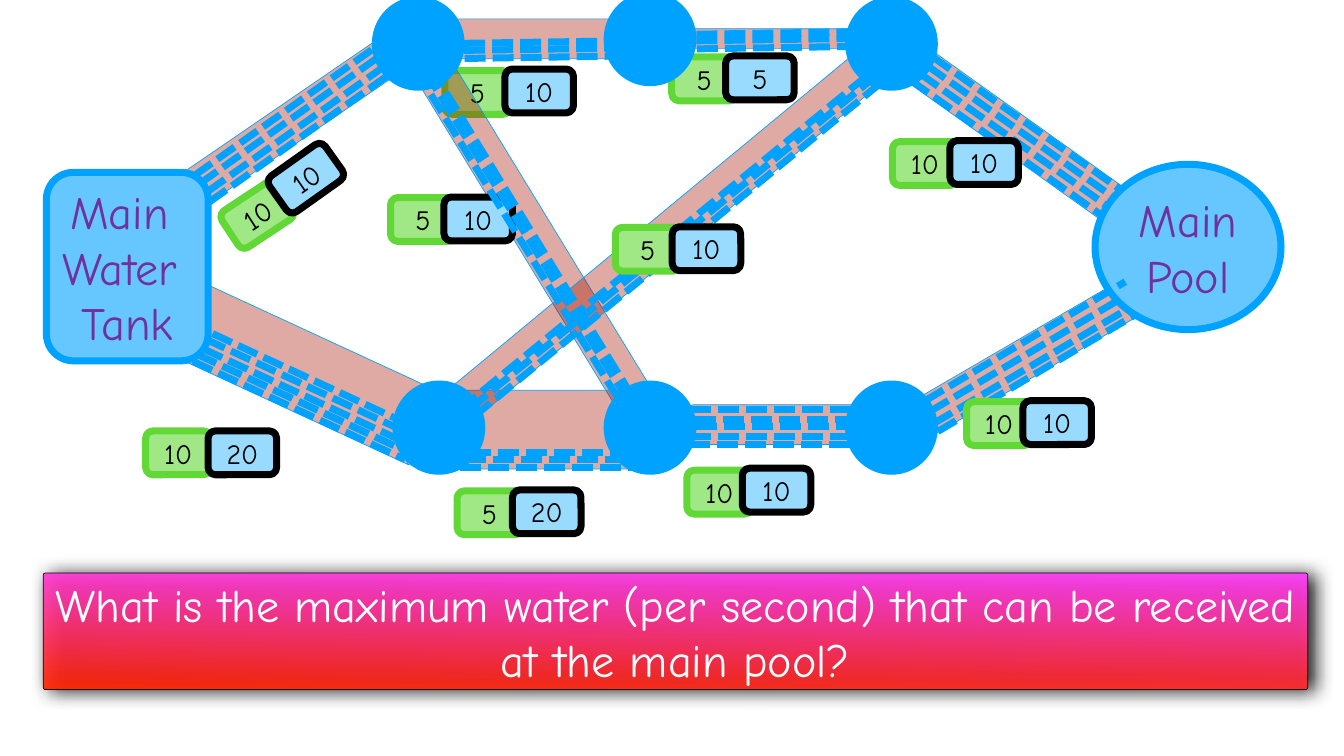
"""Build the water flow network slide."""
from lxml.etree import SubElement
from pptx import Presentation
from pptx.dml.color import RGBColor
from pptx.enum.dml import MSO_LINE
from pptx.enum.shapes import MSO_CONNECTOR, MSO_SHAPE
from pptx.enum.text import MSO_ANCHOR, PP_ALIGN
from pptx.oxml.ns import qn
from pptx.util import Inches, Pt

HUE = {
    "flow": "00A2FF", "pipe": "A61500", "lime": "A0E886", "leaf": "61D836",
    "sky": "99DAFF", "pool": "66C7FF", "ink": "000000", "plum": "7030A0",
    "pink": "FF40FF", "red": "FF2600", "white": "FFFFFF",
}

deck = Presentation()
deck.slide_width, deck.slide_height = Inches(26.67), Inches(15)
slide = deck.slides.add_slide(deck.slide_layouts[6])
shapes = slide.shapes


def tint(name):
    return RGBColor.from_string(HUE[name])


def draw(kind, place, text="", fill=None, edge=None, thick=10, turn=0,
         size=40, hue="ink"):
    shape = shapes.add_shape(kind, *[Inches(n) for n in place])
    shape.shadow.inherit = False
    shape.rotation = turn
    if fill:
        shape.fill.solid()
        shape.fill.fore_color.rgb = tint(fill)
    if edge:
        shape.line.color.rgb = tint(edge)
        shape.line.width = Pt(thick)
    else:
        shape.line.fill.background()
    if text:
        frame = shape.text_frame
        frame.word_wrap = True
        frame.vertical_anchor = MSO_ANCHOR.MIDDLE
        frame.margin_left = frame.margin_right = Inches(0.06)
        frame.margin_top = frame.margin_bottom = Inches(0.06)
        frame.text = text
        for para in frame.paragraphs:
            para.alignment = PP_ALIGN.CENTER
            para.font.name = "Comic Neue"
            para.font.size = Pt(size)
            para.font.color.rgb = tint(hue)
    return shape


def stream(x, y, run, rise):
    line = shapes.add_connector(MSO_CONNECTOR.STRAIGHT, Inches(x), Inches(y),
                                Inches(x + run), Inches(y + rise))
    line.line.color.rgb = tint("flow")
    line.line.width = Pt(10)
    line.line.dash_style = MSO_LINE.SQUARE_DOT
    SubElement(line._element.spPr, qn("a:effectLst"))


USED = {"fill": "lime", "edge": "leaf"}
CAP = {"fill": "sky", "edge": "ink"}
ROUND = MSO_SHAPE.ROUNDED_RECTANGLE

under = [
    (2.89, 8.55, "10", 0, 4.13, 8.55, "20", 0),
    (7.75, 3.92, "5", 0, 8.81, 3.91, "10", 0),
    (13.33, 1.13, "5", 0, 14.4, 1.11, "5", 0),
    (8.83, 1.4, "5", 0, 10.02, 1.37, "10", 0),
    (4.46, 3.83, "10", 326.5, 5.39, 3.1, "10", 324.6),
]
for x, y, text, turn, *_ in under:
    draw(ROUND, (x, y, 1.29, 0.87), text, turn=turn, **USED)

pipes = [
    (10.21, 0.81, 0.79, 7.71, 148.6),
    (5.37, 4.74, 1.57, 5.43, 114.8),
    (10.07, 6.64, 1.56, 3.77, 90),
    (14.95, 6.73, 0.79, 3.39, 90),
    (19.84, -0.11, 0.79, 5.68, 125.5),
    (12.68, -0.73, 0.79, 11.03, 50.4),
    (20.02, 4.02, 0.79, 6.11, 59.8),
    (14.99, -1.09, 0.39, 3.71, 90),
    (10.29, -1.28, 0.79, 4.1, 90),
    (5.36, -0.15, 0.79, 5.2, 55.6),
]
for *place, turn in pipes:
    pipe = draw(MSO_SHAPE.CAN, place, fill="pipe", edge="flow", thick=1,
                turn=turn)
    shade = pipe._element.spPr.find(qn("a:solidFill"))[0]
    SubElement(shade, qn("a:alpha"), val="36000")

draw(ROUND, (0.92, 3.42, 3.21, 3.74), "Main \nWater \nTank", fill="pool",
     edge="flow", size=66, hue="plum")

nodes = [(7.38, -0.07), (7.79, 7.55), (11.98, -0.16), (16.77, -0.07),
         (11.98, 7.55), (16.77, 7.55)]
for x, y in nodes:
    draw(MSO_SHAPE.OVAL, (x, y, 1.84, 1.87), fill="flow")

for *_, x, y, text, turn in under:
    draw(ROUND, (x, y, 1.36, 0.87), text, turn=turn, **CAP)

banner = draw(ROUND, (0.86, 11.37, 25.09, 2.31),
              "What is the maximum water (per second) that can be received "
              "at the main pool?", edge="ink", thick=1, size=66, hue="white")
banner.adjustments[0] = 0.017
banner.fill.gradient()
banner.fill.gradient_angle = 269
for stop, name in zip(banner.fill.gradient_stops, ("pink", "red")):
    stop.color.rgb = tint(name)
props = banner._element.spPr
for shade in props.iter(qn("a:srgbClr")):
    SubElement(shade, qn("a:alpha"), val="93000")
glow = SubElement(props.find(qn("a:effectLst")), qn("a:outerShdw"),
                  blurRad=str(Pt(28)), dist=str(Pt(9)), dir="0",
                  rotWithShape="0")
shade = SubElement(glow, qn("a:srgbClr"), val=HUE["ink"])
SubElement(shade, qn("a:alpha"), val="97000")

streams = [
    (3.77, -2.67, [(4.15, 4.01), (4.12, 3.8), (3.97, 3.64), (3.86, 3.48)]),
    (3.2, -0.05, [(9.22, 1.16), (9.21, 1), (9.21, 0.86),
                  (13.83, 0.97), (13.82, 0.81), (13.82, 0.68)]),
    (4.16, 6.76, [(8.26, 1.4), (8.45, 1.43)]),
    (4.54, 7.41, [(7.98, 0.41)]),
    (4.21, 1.95, [(3.83, 7.17), (3.91, 7.03), (4.03, 6.92), (4.08, 6.73),
                  (4.22, 6.62)]),
    (8.43, -6.91, [(9.41, 8.26), (9.34, 8.1), (9.13, 8.12)]),
    (3.48, 0, [(9.13, 9.28), (9.22, 9.12), (9.32, 8.98), (13.67, 8.81),
               (13.69, 8.66), (13.82, 8.47), (13.79, 8.32), (13.69, 8.12)]),
    (3.98, -2.35, [(18.61, 8.56), (18.53, 8.4), (18.46, 8.16)]),
    (3.99, 2.82, [(18.08, 1.6), (18.27, 1.47), (18.41, 1.31), (18.51, 1.13)]),
]
for run, rise, starts in streams:
    for x, y in starts:
        stream(x, y, run, rise)

draw(MSO_SHAPE.OVAL, (21.73, 3.26, 3.69, 3.28), "Main Pool", fill="pool",
     edge="flow", size=66, hue="plum")

over = [
    (12.21, 4.51, "5", 13.34, 4.5, "10"),
    (9.07, 9.74, "5", 10.17, 9.72, "20"),
    (13.63, 9.33, "10", 14.73, 9.29, "10"),
    (19.18, 7.97, "10", 20.3, 7.95, "10"),
    (17.71, 2.81, "10", 18.85, 2.79, "10"),
]
for x, y, used, left, top, cap in over:
    draw(ROUND, (x, y, 1.29, 0.87), used, **USED)
    draw(ROUND, (left, top, 1.36, 0.87), cap, **CAP)

stream(18.36, 7.95, 3.97, -2.36)

deck.save("out.pptx")
